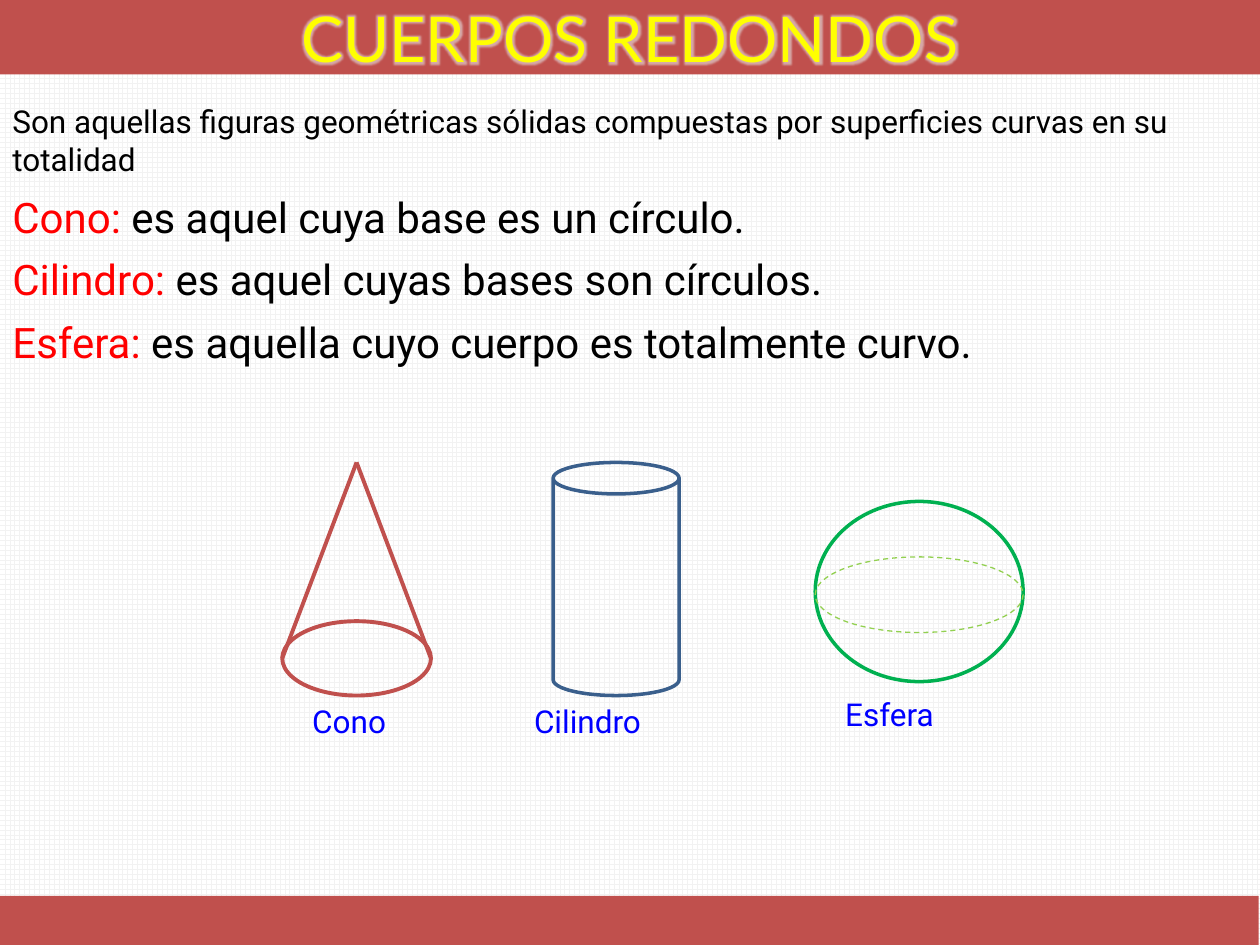
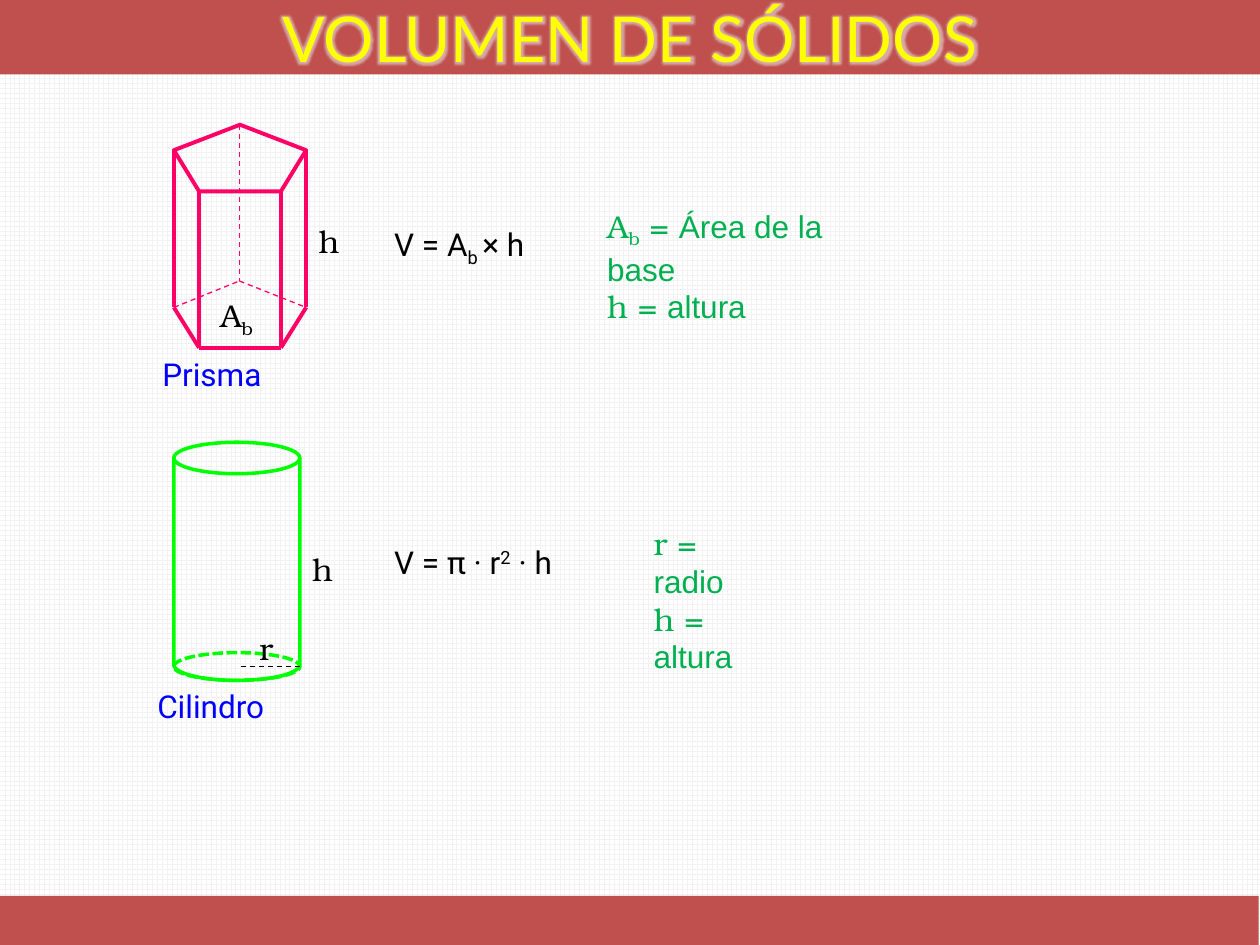
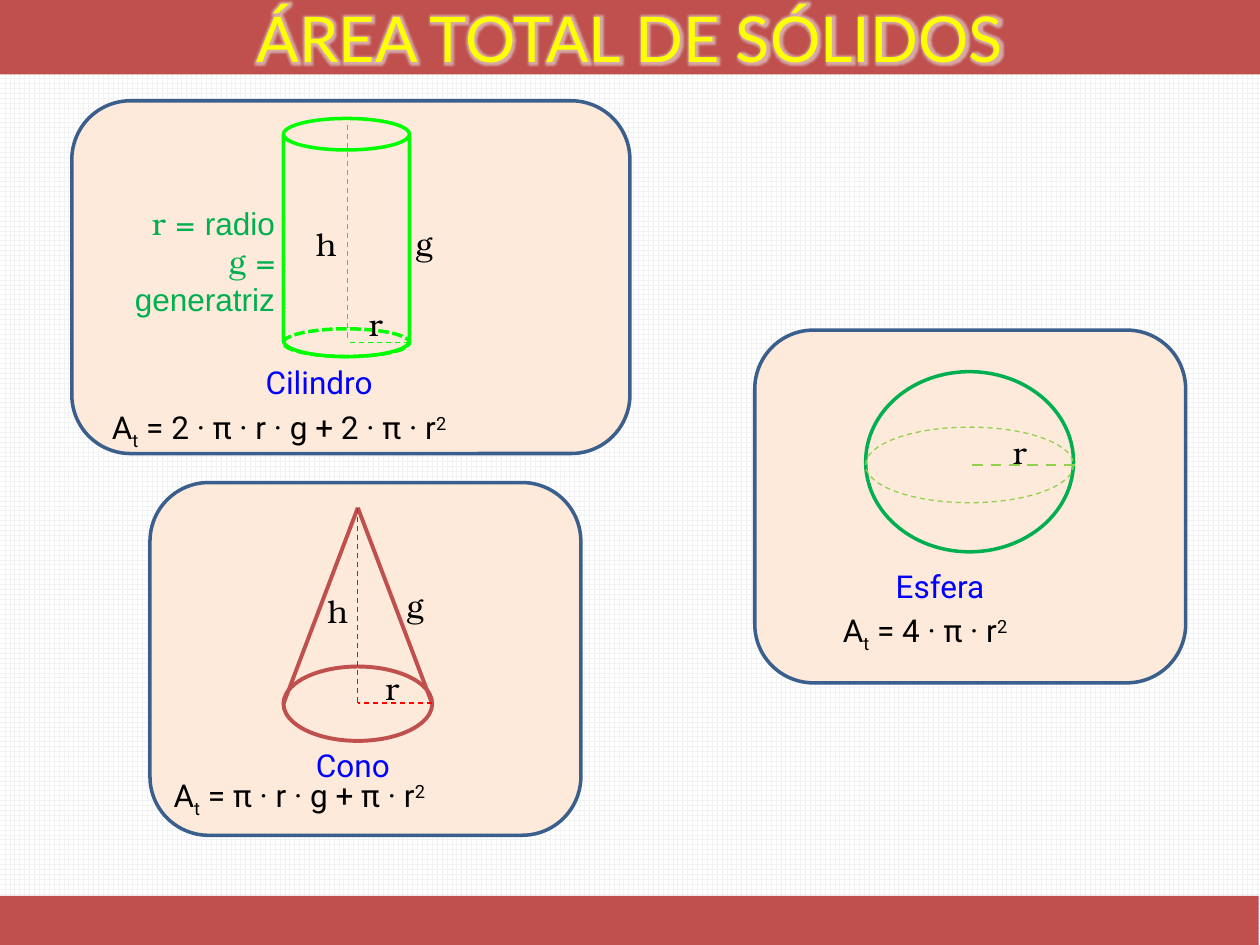
"""Builds three slides on round solids, their volume and their total area."""
from dataclasses import dataclass

from lxml import etree
from pptx import Presentation
from pptx.dml.color import RGBColor
from pptx.enum.dml import MSO_LINE, MSO_PATTERN
from pptx.enum.shapes import MSO_CONNECTOR, MSO_SHAPE
from pptx.enum.text import MSO_ANCHOR, MSO_AUTO_SIZE, PP_ALIGN
from pptx.oxml import parse_xml
from pptx.oxml.ns import nsdecls, qn
from pptx.util import Inches, Pt

COLORS = {
    "band": "C0504D", "title": "FFFF00", "grid": "F2F2F2", "white": "FFFFFF",
    "text": "000000", "term": "FF0000", "name": "0000FF", "key": "00B050",
    "cone": "C0504D", "can": "3A5F8C", "lime": "00FF00", "sphere": "00B050",
    "equator": "92D050", "prism": "FF0066", "panel": "FDEADA", "edge": "3A5F8C",
    "height": "FF0000", "glow": "E6E6E6",
}
TITLE_FONT, BODY_FONT, SYMBOL_FONT, KEY_FONT = "Lato", "Roboto", "TeX Gyre Bonum", "Arial"
DASH, SYS_DASH = MSO_LINE.DASH, MSO_LINE.SQUARE_DOT
RECT, ROUND_RECT = MSO_SHAPE.RECTANGLE, MSO_SHAPE.ROUNDED_RECTANGLE
OVAL, CAN, PENTAGON = MSO_SHAPE.OVAL, MSO_SHAPE.CAN, MSO_SHAPE.REGULAR_PENTAGON
STRAIGHT = MSO_CONNECTOR.STRAIGHT
LEFT, CENTER = PP_ALIGN.LEFT, PP_ALIGN.CENTER
RIGHT, JUSTIFY = PP_ALIGN.RIGHT, PP_ALIGN.JUSTIFY
MIDDLE, NO_AUTOFIT = MSO_ANCHOR.MIDDLE, MSO_AUTO_SIZE.NONE
SUB, SUP = -25, 30


@dataclass
class Run:
    text: str
    color: str = "text"
    font: str = BODY_FONT
    base: int = 0


@dataclass
class Pen:
    color: str
    width: float = 2
    dash: object = None


@dataclass
class Label:
    left: float
    top: float
    width: float
    paragraphs: list[list[Run]]
    height: float = 0.4
    size: int = 18
    align: object = LEFT


def rgb(name: str) -> RGBColor:
    return RGBColor.from_string(COLORS[name])


def add_label(s, label: Label) -> None:
    box = [Inches(v) for v in (label.left, label.top, label.width, label.height)]
    tf = s.shapes.add_textbox(*box).text_frame
    tf.word_wrap = True
    for i, runs in enumerate(label.paragraphs):
        p = tf.add_paragraph() if i else tf.paragraphs[0]
        p.alignment = label.align
        for run in runs:
            r = p.add_run()
            r.text = run.text
            r.font.size = Pt(label.size)
            r.font.color.rgb = rgb(run.color)
            r.font.name = run.font
            if run.base:
                r._r.get_or_add_rPr().set("baseline", str(run.base * 1000))


def add_name(s, text: str, left: float, top: float, width: float) -> None:
    add_label(s, Label(left, top, width, [[Run(text, "name")]]))


def add_symbol(s, text: str, left: float, top: float, sub: str = "") -> None:
    runs = [Run(text, font=SYMBOL_FONT)]
    if sub:
        runs.append(Run(sub, font=SYMBOL_FONT, base=SUB))
    add_label(s, Label(left, top, 0.52 if sub else 0.37, [runs]))


def key_line(symbol: str, meaning: str, sub: str = "") -> list[Run]:
    """Return the runs that explain one symbol."""
    if not sub:
        return [Run(f"{symbol} = ", "key", SYMBOL_FONT), Run(meaning, "key", KEY_FONT)]
    return [Run(symbol, "key", SYMBOL_FONT), Run(sub, "key", SYMBOL_FONT, SUB),
            Run(" = ", "key", SYMBOL_FONT), Run(meaning, "key", KEY_FONT)]


def area_formula(expression: str) -> list[Run]:
    """Return the runs of a total area that ends in a square."""
    return [Run("A"), Run("t", base=SUB), Run(f" = {expression}"), Run("2", base=SUP)]


def apply_pen(line, pen: Pen) -> None:
    line.color.rgb = rgb(pen.color)
    line.width = Pt(pen.width)
    if pen.dash is not None:
        line.dash_style = pen.dash


def add_figure(s, kind, left: float, top: float, width: float, height: float,
               pen: Pen | None = None, fill: str = "") -> None:
    sp = s.shapes.add_shape(kind, *[Inches(v) for v in (left, top, width, height)])
    sp.shadow.inherit = False
    if fill:
        sp.fill.solid()
        sp.fill.fore_color.rgb = rgb(fill)
    else:
        sp.fill.background()
    if pen:
        apply_pen(sp.line, pen)
    else:
        sp.line.fill.background()


def add_line(s, start: tuple, end: tuple, pen: Pen) -> None:
    cx = s.shapes.add_connector(STRAIGHT, *[Inches(v) for v in (*start, *end)])
    apply_pen(cx.line, pen)
    etree.SubElement(cx._element.spPr, qn("a:effectLst"))


def add_cone(s, left: float, top: float) -> None:
    pen = Pen("cone", 2.25)
    add_figure(s, OVAL, left, top + 1.26, 1.18, 0.59, pen)
    for side in (left, left + 1.18):
        add_line(s, (left + 0.59, top), (side, top + 1.555), pen)


def add_open_can(s, left: float, top: float, radius_color: str) -> None:
    """Draw a cylinder with its hidden base edge and its radius."""
    add_figure(s, CAN, left, top, 1, 1.89, Pen("lime"))
    add_figure(s, OVAL, left, top + 1.67, 1, 0.22, Pen("lime", dash=SYS_DASH))
    add_line(s, (left + 1, top + 1.78), (left + 0.5, top + 1.78),
             Pen(radius_color, 0.75, DASH))
    add_symbol(s, "r", left + 0.58, top + 1.43)


def add_sphere(s, left: float, top: float) -> None:
    add_figure(s, OVAL, left, top, 1.65, 1.43, Pen("sphere"))
    add_figure(s, OVAL, left, top + 0.44, 1.65, 0.6, Pen("equator", 0.75, DASH))


def add_prism(s, left: float, top: float) -> None:
    """Draw a pentagonal prism with its hidden edges dashed."""
    solid, hidden = Pen("prism", 2.25), Pen("prism", 0.75, DASH)
    corners = [(left, top + 0.21), (left + 0.52, top), (left + 1.05, top + 0.21),
               (left + 0.85, top + 0.53), (left + 0.2, top + 0.53)]
    base = [(x, y + 1.24) for x, y in corners]
    add_figure(s, PENTAGON, left, top, 1.05, 0.53, solid)
    for i, (upper, lower) in enumerate(zip(corners, base)):
        add_line(s, upper, lower, hidden if i == 1 else solid)
        add_line(s, lower, base[(i + 1) % 5], hidden if i < 2 else solid)


def add_slide(prs, title: str):
    """Add a slide with its title band and bottom band."""
    s = prs.slides.add_slide(prs.slide_layouts[5])
    sp = s.shapes.title
    sp.left, sp.top, sp.width, sp.height = [Inches(v) for v in (0, 0, 10, 0.59)]
    sp.fill.solid()
    sp.fill.fore_color.rgb = rgb("band")
    tf = sp.text_frame
    tf.text = title
    tf.auto_size = NO_AUTOFIT
    tf.vertical_anchor = MIDDLE
    p = tf.paragraphs[0]
    p.alignment = CENTER
    r = p.runs[0]
    r.font.size = Pt(36)
    r.font.color.rgb = rgb("title")
    rpr = r._r.get_or_add_rPr()
    rpr.insert(0, parse_xml(
        f'<a:ln {nsdecls("a")} w="9525"><a:solidFill>'
        f'<a:srgbClr val="{COLORS["text"]}"/></a:solidFill></a:ln>'))
    rpr.append(parse_xml(
        f'<a:effectLst {nsdecls("a")}><a:glow rad="63500"><a:srgbClr val="{COLORS["glow"]}">'
        '<a:alpha val="60000"/></a:srgbClr></a:glow></a:effectLst>'))
    r.font.name = TITLE_FONT
    add_figure(s, RECT, 0, 7.11, 9.99, 0.39, fill="band")
    return s


def build_round_solids(prs) -> None:
    s = add_slide(prs, "CUERPOS REDONDOS")
    intro = ("Son aquellas figuras geométricas sólidas compuestas por "
             "superficies curvas en su totalidad")
    add_label(s, Label(0, 0.76, 10, [[Run(intro)]], 0.71))
    definitions = [
        ("Cono: ", "es aquel cuya base es un círculo.", 1.47),
        ("Cilindro: ", "es aquel cuyas bases son círculos.", 1.96),
        ("Esfera: ", "es aquella cuyo cuerpo es totalmente curvo.", 2.46),
    ]
    for term, meaning, top in definitions:
        add_label(s, Label(0, top, 9.98, [[Run(term, "term"), Run(meaning)]],
                           0.5, 24, JUSTIFY))
    add_cone(s, 2.24, 3.67)
    add_name(s, "Cono", 2.38, 5.52, 0.93)
    add_figure(s, CAN, 4.39, 3.67, 1, 1.85, Pen("can"))
    add_name(s, "Cilindro", 4.14, 5.52, 1.5)
    add_sphere(s, 6.47, 3.98)
    add_name(s, "Esfera", 6.61, 5.47, 1.38)


def build_volumes(prs) -> None:
    s = add_slide(prs, "VOLUMEN DE SÓLIDOS")
    add_prism(s, 1.38, 0.99)
    add_symbol(s, "A", 1.65, 2.3, "b")
    add_symbol(s, "h", 2.43, 1.71)
    add_name(s, "Prisma", 1.19, 2.77, 1.43)
    add_open_can(s, 1.38, 3.51, "text")
    add_symbol(s, "h", 2.38, 4.32)
    add_name(s, "Cilindro", 1.15, 5.4, 1.5)
    labels = [
        Label(3.03, 1.74, 1.67, [[Run("V = A"), Run("b ", base=SUB), Run("× h")]]),
        Label(4.72, 1.59, 2.11, [key_line("A", "Área de la base", "b"),
                                 key_line("h", "altura")], 0.71),
        Label(3.03, 4.26, 2.05, [[Run("V = π · r"), Run("2", base=SUP), Run(" · h")]]),
        Label(5.09, 4.11, 1.16, [key_line("r", "radio"), key_line("h", "altura")], 0.71),
    ]
    for label in labels:
        add_label(s, label)


def build_total_areas(prs) -> None:
    s = add_slide(prs, "ÁREA TOTAL DE SÓLIDOS")
    for left, top, width in [(5.99, 2.62, 3.42), (1.19, 3.83, 3.42), (0.57, 0.8, 4.43)]:
        add_figure(s, ROUND_RECT, left, top, width, 2.8, Pen("edge"), "panel")

    add_line(s, (2.76, 0.99), (2.76, 2.69), Pen("lime", 0.75, DASH))
    add_open_can(s, 2.25, 0.94, "lime")
    add_name(s, "Cilindro", 2.01, 2.83, 1.5)

    add_cone(s, 2.25, 4.03)
    for start in [(2.84, 4.03), (3.43, 5.58)]:
        add_line(s, start, (2.84, 5.58), Pen("height", 0.75, DASH))
    add_name(s, "Cono", 2.41, 5.87, 0.93)

    add_sphere(s, 6.87, 2.95)
    add_line(s, (8.53, 3.69), (7.7, 3.69), Pen("equator", 1.5, DASH))
    add_name(s, "Esfera", 7.01, 4.45, 1.38)

    symbols = [("h", 2.41, 1.74), ("g", 3.2, 1.73), ("h", 2.5, 4.65),
               ("r", 2.96, 5.26), ("g", 3.13, 4.6), ("r", 7.94, 3.39)]
    for text, left, top in symbols:
        add_symbol(s, text, left, top)
    labels = [
        Label(0.79, 1.57, 1.49, [key_line("r", "radio"), key_line("g", "generatriz")],
              0.71, align=RIGHT),
        Label(0.79, 3.19, 4.21, [area_formula("2 · π · r · g + 2 · π · r")]),
        Label(1.28, 6.11, 3.18, [area_formula("π · r · g + π · r")]),
        Label(6.59, 4.8, 2.22, [area_formula("4 · π · r")]),
    ]
    for label in labels:
        add_label(s, label)


def main() -> None:
    prs = Presentation()
    prs.slide_width, prs.slide_height = Inches(10), Inches(7.5)
    fill = prs.slide_master.background.fill
    fill.patterned()
    fill.pattern = MSO_PATTERN.LARGE_GRID
    fill.fore_color.rgb = rgb("grid")
    fill.back_color.rgb = rgb("white")
    build_round_solids(prs)
    build_volumes(prs)
    build_total_areas(prs)
    prs.save("out.pptx")


if __name__ == "__main__":
    main()
